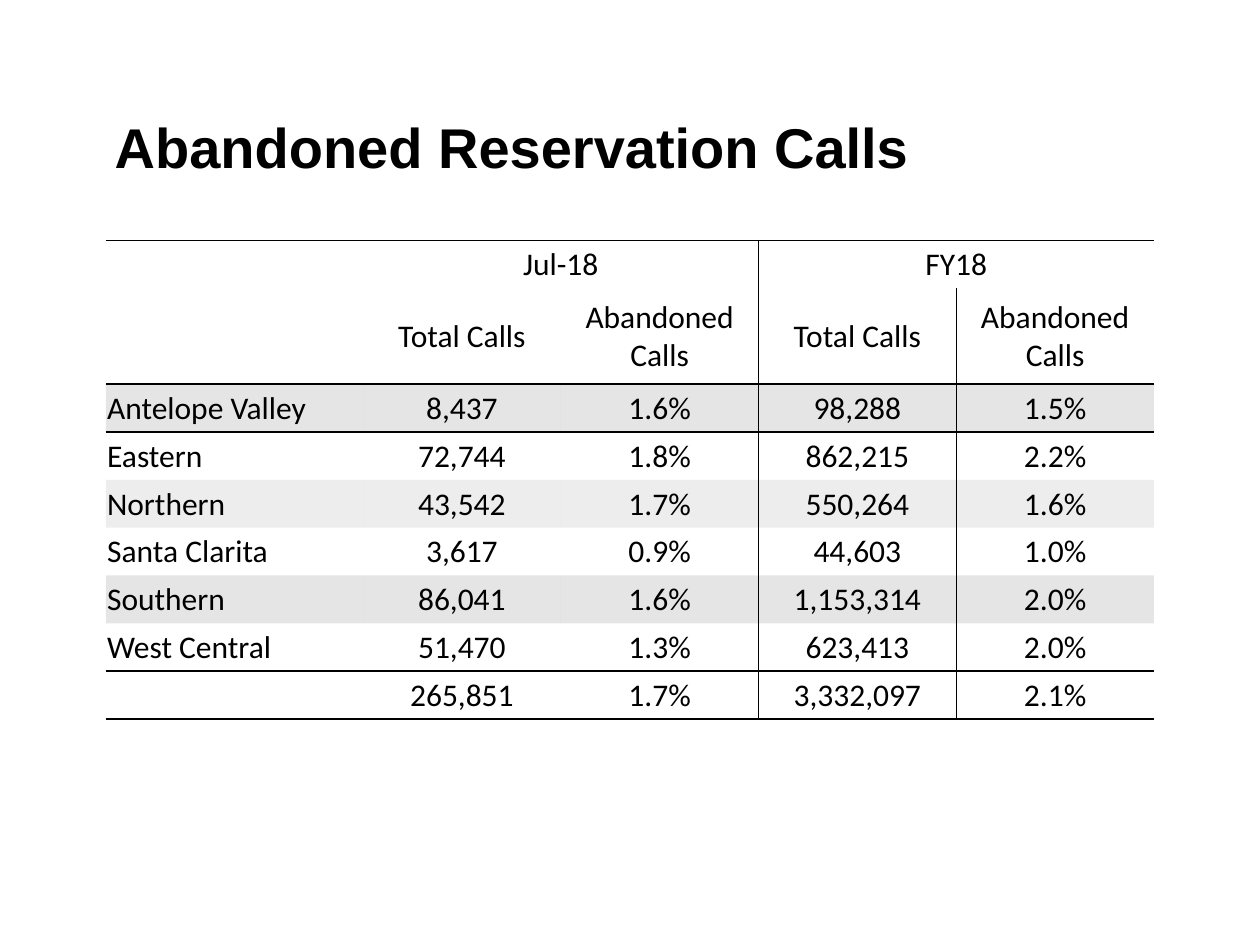
import pptx
import pptx.util
import pptx.dml.color
import pptx.enum.text
import pptx.oxml
import pptx.oxml.ns
from lxml import etree

Pt = pptx.util.Pt
RGB = pptx.dml.color.RGBColor
ALIGN = pptx.enum.text.PP_ALIGN
MIDDLE = pptx.enum.text.MSO_ANCHOR.MIDDLE
qn = pptx.oxml.ns.qn

BLACK = RGB(0x00, 0x00, 0x00)
GREY = RGB(0x80, 0x80, 0x80)
PALE = RGB(0xA6, 0xA6, 0xA6)
PLAIN_STYLE = "{2D5ABB26-0587-4C30-8999-92F81FD0307C}"

ROWS = [
    ["", "Jul-18", "", "FY18", ""],
    ["", "Total Calls", "Abandoned Calls", "Total Calls", "Abandoned Calls"],
    ["Antelope Valley", "8,437", "1.6%", "98,288", "1.5%"],
    ["Eastern", "72,744", "1.8%", "862,215", "2.2%"],
    ["Northern", "43,542", "1.7%", "550,264", "1.6%"],
    ["Santa Clarita", "3,617", "0.9%", "44,603", "1.0%"],
    ["Southern", "86,041", "1.6%", "1,153,314", "2.0%"],
    ["West Central", "51,470", "1.3%", "623,413", "2.0%"],
    ["", "265,851", "1.7%", "3,332,097", "2.1%"],
]
SHADES = {2: GREY, 4: PALE, 6: GREY}
RULES = {0, 2, 3, 8, 9}  # row edges that carry a line, counted from the top


def style(para, font, size, bold=False):
    for run in para.runs:
        run.font.name = font
        run.font.size = Pt(size)
        run.font.bold = bold
        run.font.color.rgb = BLACK


def add_title(slide, left, top, width, height):
    box = slide.shapes.add_textbox(Pt(left), Pt(top), Pt(width), Pt(height))
    frame = box.text_frame
    frame.word_wrap = True
    frame.vertical_anchor = MIDDLE
    frame.text = "Abandoned Reservation Calls"
    style(frame.paragraphs[0], "Arial", 32, True)


def add_lines(cell, row, col):
    """Draw the cell's borders; call before filling, as the schema wants."""
    sides = {
        "L": col == 3 or (col == 4 and row > 0),
        "R": col == 2 or (col == 3 and row > 0),
        "T": row in RULES,
        "B": row + 1 in RULES,
    }
    props = cell._tc.get_or_add_tcPr()
    for side, shown in sides.items():
        line = etree.SubElement(props, qn("a:ln" + side), w=str(Pt(1)))
        if shown:
            fill = etree.SubElement(line, qn("a:solidFill"))
            etree.SubElement(fill, qn("a:srgbClr"), val=str(BLACK))
        else:
            etree.SubElement(line, qn("a:noFill"))


def shade(cell, color):
    if color is None:
        cell.fill.background()
        return
    cell.fill.solid()
    cell.fill.fore_color.rgb = color
    tint = cell._tc.tcPr.find(qn("a:solidFill"))[0]
    etree.SubElement(tint, qn("a:alpha"), val="20000")


def set_cell(cell, text, row, col):
    cell.margin_left = cell.margin_right = cell.margin_top = Pt(0.72)
    cell.margin_bottom = Pt(0)
    cell.vertical_anchor = MIDDLE
    add_lines(cell, row, col)
    shade(cell, SHADES.get(row))
    if text:
        cell.text_frame.text = text
    para = cell.text_frame.paragraphs[0]
    para.alignment = ALIGN.CENTER if col else ALIGN.LEFT
    style(para, "Calibri", 18)


def add_calls(slide, left, top, width, height):
    count = len(ROWS[0])
    frame = slide.shapes.add_table(
        len(ROWS), count, Pt(left), Pt(top), Pt(width), Pt(height))
    table = frame.table
    table.first_row = table.horz_banding = False
    table._tbl.tblPr.find(qn("a:tableStyleId")).text = PLAIN_STYLE

    first = 147
    for col, column in enumerate(table.columns):
        column.width = Pt((width - first) / (count - 1) if col else first)
    unit = height / (len(ROWS) + 1)  # the second row is two units tall
    for row, line in enumerate(table.rows):
        line.height = Pt(2 * unit if row == 1 else unit)

    for row, texts in enumerate(ROWS):
        for col, text in enumerate(texts):
            set_cell(table.cell(row, col), text, row, col)
    for col in (1, 3):
        table.cell(0, col).merge(table.cell(0, col + 1))


def main():
    deck = pptx.Presentation()
    deck.slide_width, deck.slide_height = Pt(720), Pt(540)
    slide = deck.slides.add_slide(deck.slide_layouts[6])
    add_title(slide, 58.5, 60.5, 604, 46)
    add_calls(slide, 60.5, 137.5, 599, 273.5)
    deck.save("out.pptx")


if __name__ == "__main__":
    main()
